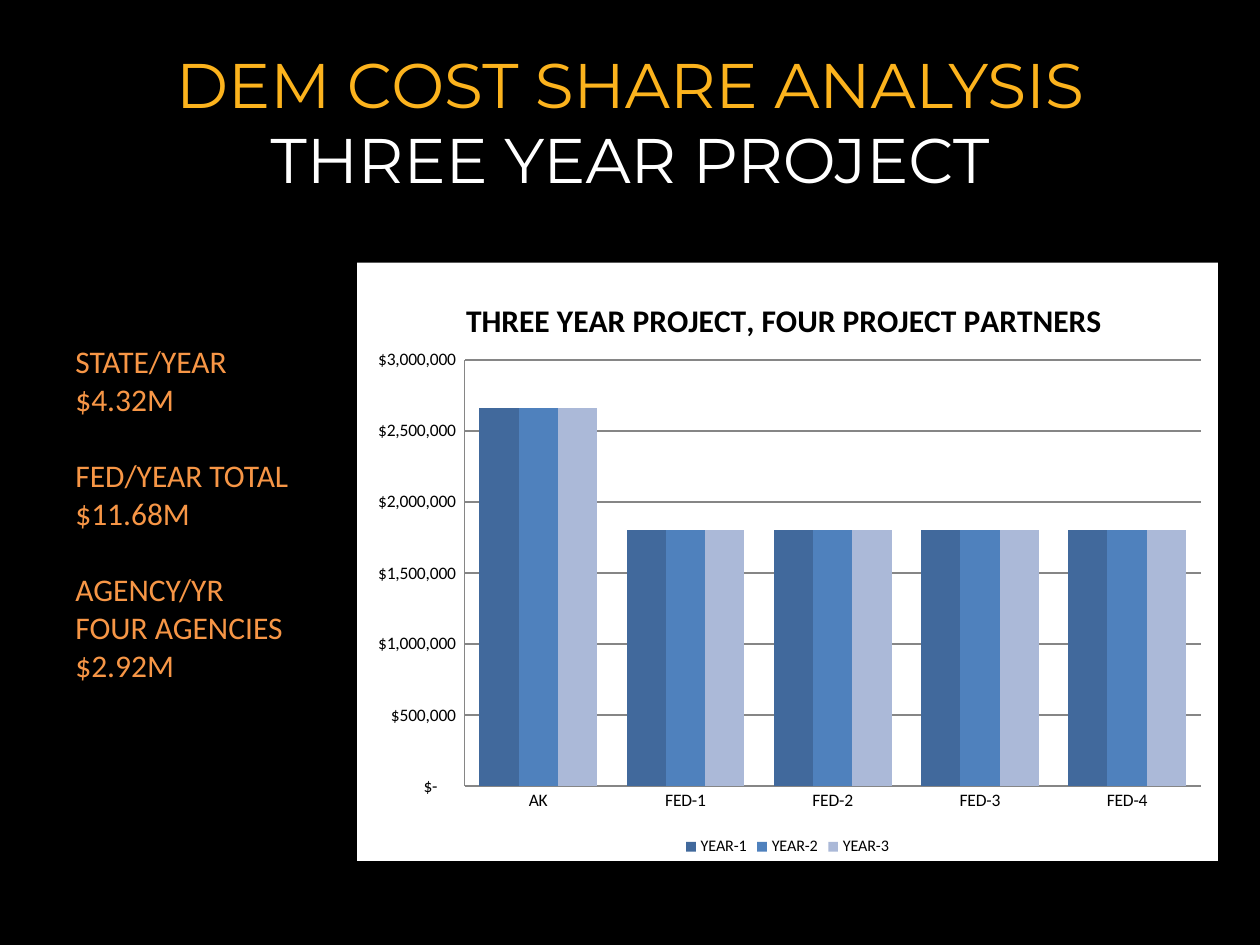
from dataclasses import dataclass
from copy import deepcopy

from lxml.etree import SubElement
from pptx import Presentation
from pptx.chart.data import CategoryChartData
from pptx.dml.color import RGBColor
from pptx.enum.chart import XL_CHART_TYPE as ChartType
from pptx.enum.chart import XL_LEGEND_POSITION as LegendPosition
from pptx.enum.chart import XL_TICK_MARK as TickMark
from pptx.enum.text import MSO_ANCHOR as Anchor
from pptx.enum.text import MSO_AUTO_SIZE as AutoSize
from pptx.enum.text import PP_ALIGN as Align
from pptx.oxml import parse_xml
from pptx.oxml.ns import nsdecls, qn
from pptx.util import Inches, Pt


@dataclass(frozen=True)
class Theme:
    """Colours, fonts and type sizes of the slide."""
    background: str = "000000"
    panel: str = "FFFFFF"
    ink: str = "000000"
    headline: str = "FCB31D"
    subtitle: str = "FFFFFF"
    summary: str = "F79646"
    grid: str = "868686"
    years: tuple = ("41699C", "4F81BD", "ABB9D8")
    title_font: str = "Montserrat"
    body_font: str = "Calibri"
    title_size: float = 36
    body_size: float = 18
    axis_size: float = 10
    legend_size: float = 9.2


THEME = Theme()
UNIT = Inches(1) // 6
CURRENCY = r'_("$"* #,##0_);_("$"* \(#,##0\);_("$"* "-"??_);_(@_)'
PARTNERS = ["AK", "FED-1", "FED-2", "FED-3", "FED-4"]
YEARLY_SHARES = [2660000] + [1800000] * 4
SUMMARY = [
    ["STATE/YEAR", "$4.32M"],
    ["FED/YEAR TOTAL", "$11.68M"],
    ["AGENCY/YR", "FOUR AGENCIES", "$2.92M"],
]


def cells(*spans):
    """Convert columns and rows of the 60 by 45 grid to lengths."""
    return [int(span * UNIT) for span in spans]


def format_font(font, size, color, name=THEME.body_font, bold=False):
    """Apply size, colour, typeface and weight to a font."""
    font.size, font.name, font.bold = Pt(size), name, bold
    font.color.rgb = RGBColor.from_string(color)


def add_text(paragraph, text, **style):
    """Append a formatted run to a paragraph."""
    run = paragraph.add_run()
    run.text = text
    format_font(run.font, **style)
    return run


def add_title(slide):
    """Fill the title placeholder with its two coloured lines."""
    title = slide.shapes.title
    title.left, title.top, title.width, title.height = cells(3, 0, 54, 11.5)
    title.text_frame.vertical_anchor = Anchor.MIDDLE
    paragraph = title.text_frame.paragraphs[0]
    paragraph.alignment = Align.CENTER
    style = dict(size=THEME.title_size, name=THEME.title_font)
    headline = add_text(paragraph, "DEM COST SHARE ANALYSIS", color=THEME.headline, **style)
    paragraph.add_line_break()
    line_break = paragraph._p.find(qn("a:br"))
    line_break.append(deepcopy(headline._r.rPr))
    add_text(paragraph, "THREE YEAR PROJECT", color=THEME.subtitle, **style)


def add_summary(slide):
    """Add the cost groups, separated by paragraph spacing."""
    frame = slide.shapes.add_textbox(*cells(3, 16, 12, 17)).text_frame
    frame.word_wrap = True
    frame.auto_size = AutoSize.SHAPE_TO_FIT_TEXT
    for group_index, group in enumerate(SUMMARY):
        for line_index, line in enumerate(group):
            first = group_index == line_index == 0
            paragraph = frame.paragraphs[0] if first else frame.add_paragraph()
            if group_index and line_index == 0:
                paragraph.space_before = Pt(22)
            add_text(paragraph, line, size=THEME.body_size, color=THEME.summary)


def chart_layout(**values):
    """Build a manual chart layout from shares of the chart's size."""
    layout = parse_xml(f"<c:layout {nsdecls('c')}><c:manualLayout/></c:layout>")
    for tag, value in values.items():
        SubElement(layout[0], qn(f"c:{tag}")).set("val", str(value))
    return layout


def place_chart_parts(chart):
    """Position the chart title and plot area and paint the panel."""
    title = chart.chart_title._element
    plot_area = chart._chartSpace.chart.plotArea
    for part in (title, plot_area):
        for layout in part.findall(qn("c:layout")):
            part.remove(layout)
    title.find(qn("c:tx")).addnext(
        chart_layout(xMode="edge", yMode="edge", x=0.12, y=0.05))
    plot_area.insert(0, chart_layout(
        layoutTarget="inner", xMode="edge", yMode="edge", x=0.125, y=0.163, w=0.855, h=0.712))
    chart._chartSpace.chart.addnext(parse_xml(
        f'<c:spPr {nsdecls("c", "a")}><a:solidFill><a:srgbClr val="{THEME.panel}"/>'
        "</a:solidFill><a:ln><a:noFill/></a:ln></c:spPr>"))


def format_axes(chart):
    """Style both axes and the gridlines."""
    values = chart.value_axis
    values.minimum_scale, values.maximum_scale, values.major_unit = 0, 3000000, 500000
    values.tick_labels.number_format = CURRENCY
    values.tick_labels.number_format_is_linked = False
    for axis in (chart.category_axis, values):
        axis.major_tick_mark = axis.minor_tick_mark = TickMark.NONE
        format_font(axis.tick_labels.font, THEME.axis_size, THEME.ink)
    for line in (values.format.line, chart.category_axis.format.line,
                 values.major_gridlines.format.line):
        line.color.rgb = RGBColor.from_string(THEME.grid)
        line.width = Pt(0.75)


def add_cost_chart(slide):
    """Add the clustered columns of yearly cost by partner."""
    data = CategoryChartData(number_format=CURRENCY)
    data.categories = PARTNERS
    for year in range(1, len(THEME.years) + 1):
        data.add_series(f"YEAR-{year}", YEARLY_SHARES)
    chart = slide.shapes.add_chart(
        ChartType.COLUMN_CLUSTERED, *cells(17, 12.5, 41, 28.5), data).chart
    format_font(chart.font, THEME.axis_size, THEME.ink)
    add_text(chart.chart_title.text_frame.paragraphs[0],
             "THREE YEAR PROJECT, FOUR PROJECT PARTNERS",
             size=THEME.body_size, color=THEME.ink, bold=True)
    chart.chart_title.include_in_layout = False
    chart.has_legend = True
    chart.legend.position = LegendPosition.BOTTOM
    chart.legend.include_in_layout = False
    format_font(chart.legend.font, THEME.legend_size, THEME.ink)
    columns = chart.plots[0]
    columns.gap_width, columns.overlap, columns.vary_by_categories = 75, 0, False
    for series, color in zip(columns.series, THEME.years):
        series.format.fill.solid()
        series.format.fill.fore_color.rgb = RGBColor.from_string(color)
    format_axes(chart)
    place_chart_parts(chart)


def main():
    """Build and save the cost share slide."""
    deck = Presentation()
    deck.slide_width, deck.slide_height = cells(60, 45)
    slide = deck.slides.add_slide(deck.slide_layouts[5])
    slide.background.fill.solid()
    slide.background.fill.fore_color.rgb = RGBColor.from_string(THEME.background)
    add_cost_chart(slide)
    add_title(slide)
    add_summary(slide)
    deck.save("out.pptx")


if __name__ == "__main__":
    main()
